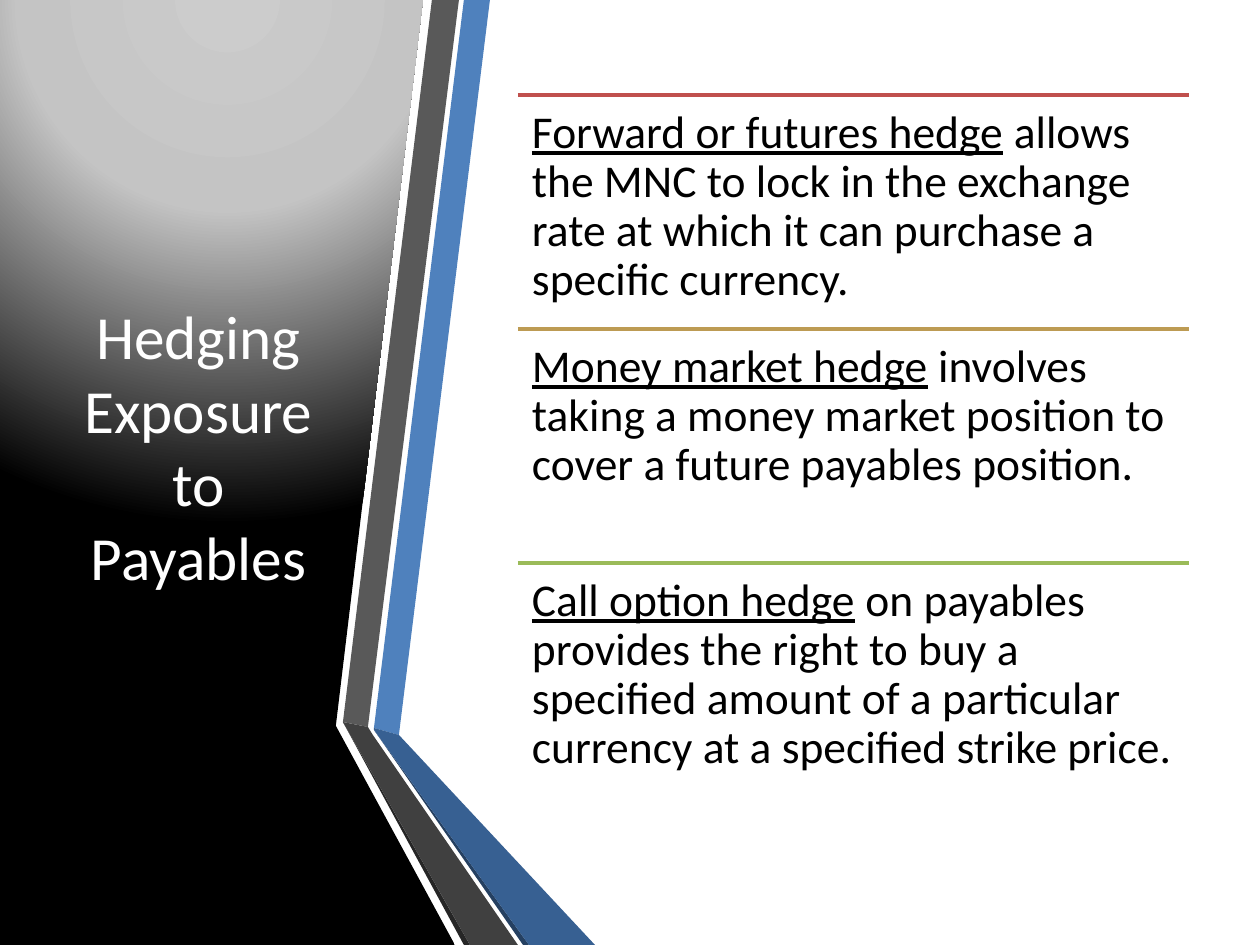
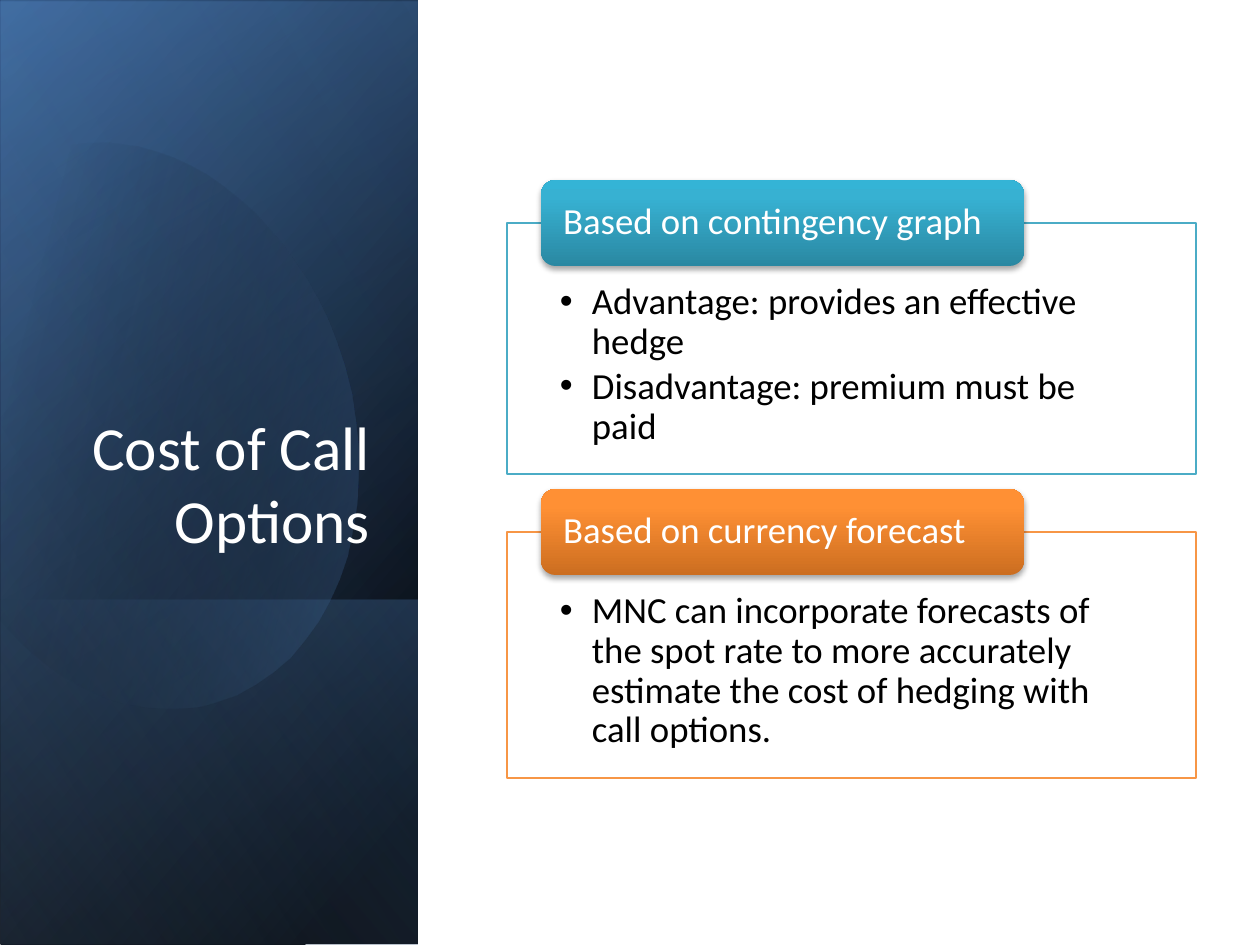
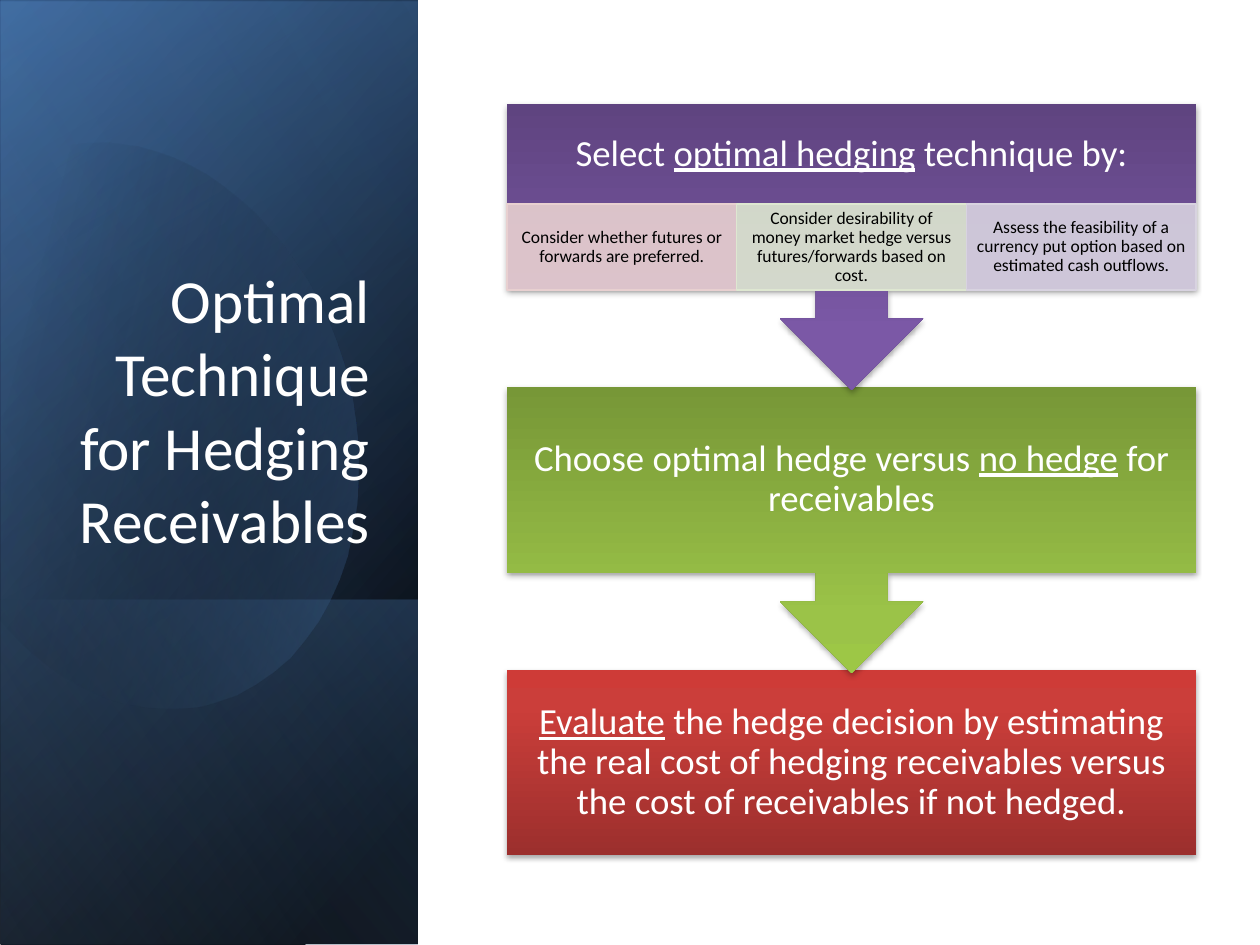
from math import cos, radians, sin

from lxml import etree
from pptx import Presentation
from pptx import util as u
from pptx.dml.color import RGBColor
from pptx.enum import shapes, text
from pptx.oxml.ns import qn

SCALE = 914400 / 126
WIDE, HIGH = 1260, 945


class Theme:
    font = "Calibri"
    black, white = "000000", "FFFFFF"
    blue, deep, navy, pale = "4F81BD", "376092", "254061", "95B3D7"
    title, lead, body, note = 35, 26, 21, 10
    red = [(0, "9C2F2D"), (80, "CB3E3A"), (100, "CE3B37")]
    green = [(0, "779737"), (80, "9BC348"), (100, "9DC746")]
    violet = [(0, "5F4480"), (80, "7B58A6"), (100, "7C57A8")]
    teal = [(0, "2A88A2"), (80, "37B1D2"), (100, "34B4D6")]
    orange = [(0, "CC6E20"), (80, "FF9034"), (100, "FF9136")]


HEDGES = [
    ("C0504D", "_Forward or futures hedge_ allows the MNC to lock in the exchange "
     "rate at which it can purchase a specific currency."),
    ("BD9B53", "_Money market hedge_ involves taking a money market position to "
     "cover a future payables position."),
    ("9BBB59", "_Call option hedge_ on payables provides the right to buy a "
     "specified amount of a particular currency at a specified strike price."),
]
COSTS = [
    (223, 251, "4BACC6", Theme.teal, "Based on contingency graph",
     ["Advantage: provides an effective hedge", "Disadvantage: premium must be paid"]),
    (532, 246, "F79646", Theme.orange, "Based on currency forecast",
     ["MNC can incorporate forecasts of the spot rate to more accurately "
      "estimate the cost of hedging with call options."]),
]
STEPS = [
    (Theme.violet, 101, "Select _optimal hedging_ technique by:"),
    (Theme.green, 185, "Choose optimal hedge versus _no hedge_ for receivables"),
    (Theme.red, 185, "_Evaluate_ the hedge decision by estimating the real cost of "
     "hedging receivables versus the cost of receivables if not hedged."),
]
NOTES = [
    ("E8D0D0", "Consider whether futures or forwards are preferred."),
    ("DEE7D1", "Consider desirability of money market hedge versus "
     "futures/forwards based on cost."),
    ("D8D3E0", "Assess the feasibility of a currency put option based on "
     "estimated cash outflows."),
]
WEDGE = [(333, 0), (423, 0), (336, 725), (336, 726), (455, 945), (0, 945), (0, 0)]
GLOW = [(0, "CCCCCC"), (40, "C4C4C4"), (100, Theme.black)]
BANDS = [
    (Theme.blue, [(374, 728), (399, 735), (490, 0), (464, 0)]),
    ("595959", [(459, 0), (432, 0), (343, 722), (368, 727)]),
    ("262626", [(343, 722), (464, 945), (470, 945)]),
    (Theme.navy, [(374, 730), (523, 945), (529, 945)]),
    (Theme.deep, [(374, 730), (529, 945), (595, 945), (399, 735), (374, 728)]),
    ("404040", [(518, 945), (373, 735), (368, 727), (343, 722), (470, 945)]),
]
PANES = [
    ((-263, 263, 945, 417), [(8, Theme.black), (100, Theme.deep)], 50),
    ((-263, 266, 945, 417), [(0, Theme.black, 0), (99, Theme.blue, 46)], 30),
    ((37, 564, 345, 417), [(2, Theme.blue, 29), (100, Theme.black, 30)], 130),
    ((-263, 263, 945, 417), [(0, Theme.black, 0), (99, Theme.pale, 11)], 120),
]
BLOB = [
    [(121, 144)],
    [(215, 154), (307, 242), (344, 365)],
    [(387, 519), (330, 669), (215, 702)],
    [(144, 723), (67, 693), (9, 630)],
    [(-4, 615)], [(-31, 209)], [(-19, 194)],
    [(3, 173), (28, 158), (57, 149)],
    [(78, 142), (100, 141), (121, 144)],
]
BLOB_FILL = [(29, Theme.black, 0), (100, Theme.blue, 43)]
BLOB_MID, BLOB_TURN = (150, 421), 343.9


def emu(px):
    return int(px * SCALE)


def rgb(code):
    return RGBColor.from_string(code)


def sub(node, tag, **attrs):
    return etree.SubElement(node, qn(tag), {k: str(v) for k, v in attrs.items()})


def tint(node, code, alpha=100):
    clr = sub(node, "a:srgbClr", val=code)
    if alpha < 100:
        sub(clr, "a:alpha", val=alpha * 1000)


def paint(shape, fill, angle=270, alpha=100, line=None, shade=False, focus=None):
    shape.shadow.inherit = False
    props = shape.element.spPr
    shape.fill.solid()
    old = props.find(qn("a:solidFill"))
    if isinstance(fill, str):
        new = etree.Element(qn("a:solidFill"))
        tint(new, fill, alpha)
    else:
        new = etree.Element(qn("a:gradFill"), {"rotWithShape": "1"})
        stops = sub(new, "a:gsLst")
        for pos, *look in fill:
            tint(sub(stops, "a:gs", pos=pos * 1000), *look)
        if focus:
            way = sub(new, "a:path", path="circle")
            sub(way, "a:fillToRect", **{k: v * 1000 for k, v in zip("ltrb", focus)})
        else:
            sub(new, "a:lin", ang=angle * 60000, scaled=0)
    props.replace(old, new)
    if line:
        shape.line.color.rgb = rgb(line)
        shape.line.width = u.Pt(0.75)
    else:
        shape.line.fill.background()
    if shade:
        cast = sub(props.find(qn("a:effectLst")), "a:outerShdw", blurRad=40000,
                   dist=23000, dir=5400000, rotWithShape=0)
        tint(cast, Theme.black, 35)
    return shape


def add(slide, kind, box, fill, **look):
    return paint(slide.shapes.add_shape(kind, *map(emu, box)), fill, **look)


def write(target, words, box=None, size=Theme.body, color=Theme.white, align="LEFT",
          anchor="MIDDLE", inset=(20, 20, 20, 20), lead=0.9, bullet=False):
    if box:
        target = target.shapes.add_textbox(*map(emu, box))
    frame = target.text_frame
    frame.word_wrap = True
    frame.vertical_anchor = getattr(text.MSO_ANCHOR, anchor)
    (frame.margin_left, frame.margin_top,
     frame.margin_right, frame.margin_bottom) = map(emu, inset)
    for i, line in enumerate([words] if isinstance(words, str) else words):
        para = frame.add_paragraph() if i else frame.paragraphs[0]
        if bullet:
            props = para._p.get_or_add_pPr()
            props.set("marL", str(emu(32)))
            props.set("indent", str(-emu(32)))
            sub(props, "a:buFont", typeface="Arial")
            sub(props, "a:buChar", char="•")
            para.space_after = u.Pt(3)
        para.alignment = getattr(text.PP_ALIGN, align)
        para.line_spacing = lead
        for k, part in enumerate(line.split("_")):
            if part:
                run = para.add_run()
                run.text = part
                run.font.name = Theme.font
                run.font.size = u.Pt(size)
                run.font.color.rgb = rgb(color)
                run.font.underline = k % 2 == 1


def title(slide, words, box, **look):
    write(slide, words, box, size=Theme.title, inset=(13, 6, 13, 6), lead=1.0, **look)


def trace(slide, points, fill, **look):
    pen = slide.shapes.build_freeform(*points[0], scale=SCALE)
    pen.add_line_segments(points[1:], close=True)
    return paint(pen.convert_to_shape(), fill, **look)


def curve(parts, count=16):
    points = list(parts[0])
    for part in parts[1:]:
        if len(part) == 1:
            points += part
            continue
        ends = [points[-1], *part]
        for i in range(1, count + 1):
            t = i / count
            mix = ((1 - t) ** 3, 3 * t * (1 - t) ** 2, 3 * t * t * (1 - t), t ** 3)
            points.append(tuple(sum(m * p[k] for m, p in zip(mix, ends))
                                for k in (0, 1)))
    return points


def turn(points, mid, angle):
    c, s = cos(radians(angle)), sin(radians(angle))
    return [(mid[0] + (x - mid[0]) * c - (y - mid[1]) * s,
             mid[1] + (x - mid[0]) * s + (y - mid[1]) * c) for x, y in points]


def panel(slide, words):
    def pane(box, stops, angle):
        shape = add(slide, shapes.MSO_SHAPE.RECTANGLE, box, stops, angle=angle)
        shape.rotation = 90
        shape.element.spPr.xfrm.set("flipH", "1")

    for item in PANES[:3]:
        pane(*item)
    flat = turn(curve(BLOB), BLOB_MID, -BLOB_TURN)
    trace(slide, flat, BLOB_FILL, angle=30).rotation = BLOB_TURN
    pane(*PANES[3])
    title(slide, words, (60, 232, 323, 330), align="RIGHT", anchor="BOTTOM")


def payables(slide):
    trace(slide, WEDGE, GLOW, focus=(50, -80, 50, 180))
    for color, points in BANDS:
        trace(slide, points, color)
    title(slide, "Hedging Exposure to Payables", (55, 94, 287, 703), align="CENTER")
    left, wide, step = 518, 671, 234
    for i, (color, words) in enumerate(HEDGES):
        top = 95 + i * step
        rule = slide.shapes.add_connector(
            shapes.MSO_CONNECTOR.STRAIGHT, *map(emu, (left, top, left + wide, top)))
        rule.line.color.rgb = rgb(color)
        rule.line.width = u.Pt(2)
        sub(rule.element.spPr, "a:effectLst")
        write(slide, words, (left, top, wide, step), size=Theme.lead,
              color=Theme.black, anchor="TOP", inset=(14, 14, 14, 14))


def costs(slide):
    panel(slide, "Cost of Call Options")
    for top, high, line, stops, head, points in COSTS:
        card = add(slide, shapes.MSO_SHAPE.RECTANGLE, (507, top, 689, high),
                   Theme.white, alpha=90, line=line)
        write(card, points, color=Theme.black, anchor="TOP",
              inset=(53, 60, 53, 20), bullet=True)
        tab = add(slide, shapes.MSO_SHAPE.ROUNDED_RECTANGLE, (541, top - 43, 483, 86),
                  stops, shade=True)
        write(tab, head, inset=(18, 0, 18, 0))


def choice(slide):
    panel(slide, "Optimal Technique for Hedging Receivables")
    left, wide, step = 507, 689, 283
    last = len(STEPS) - 1
    for i in range(last, -1, -1):
        stops, high, words = STEPS[i]
        top = 104 + i * step
        kind, full = ((shapes.MSO_SHAPE.RECTANGLE, 185) if i == last
                      else (shapes.MSO_SHAPE.UP_ARROW_CALLOUT, 286))
        block = add(slide, kind, (left, top, wide, full), stops, shade=True)
        if i < last:
            block.rotation = 180
        write(slide, words, (left, top, wide, high), align="CENTER")
    cell = wide / len(NOTES)
    for i, (color, words) in enumerate(NOTES):
        note = add(slide, shapes.MSO_SHAPE.RECTANGLE, (left + i * cell, 204, cell, 86),
                   color, alpha=90, line=color)
        write(note, words, size=Theme.note, color=Theme.black, align="CENTER",
              inset=(9, 1, 9, 1))


def main():
    deck = Presentation()
    deck.slide_width, deck.slide_height = emu(WIDE), emu(HIGH)
    for build in (payables, costs, choice):
        build(deck.slides.add_slide(deck.slide_layouts[6]))
    deck.save("out.pptx")


if __name__ == "__main__":
    main()
